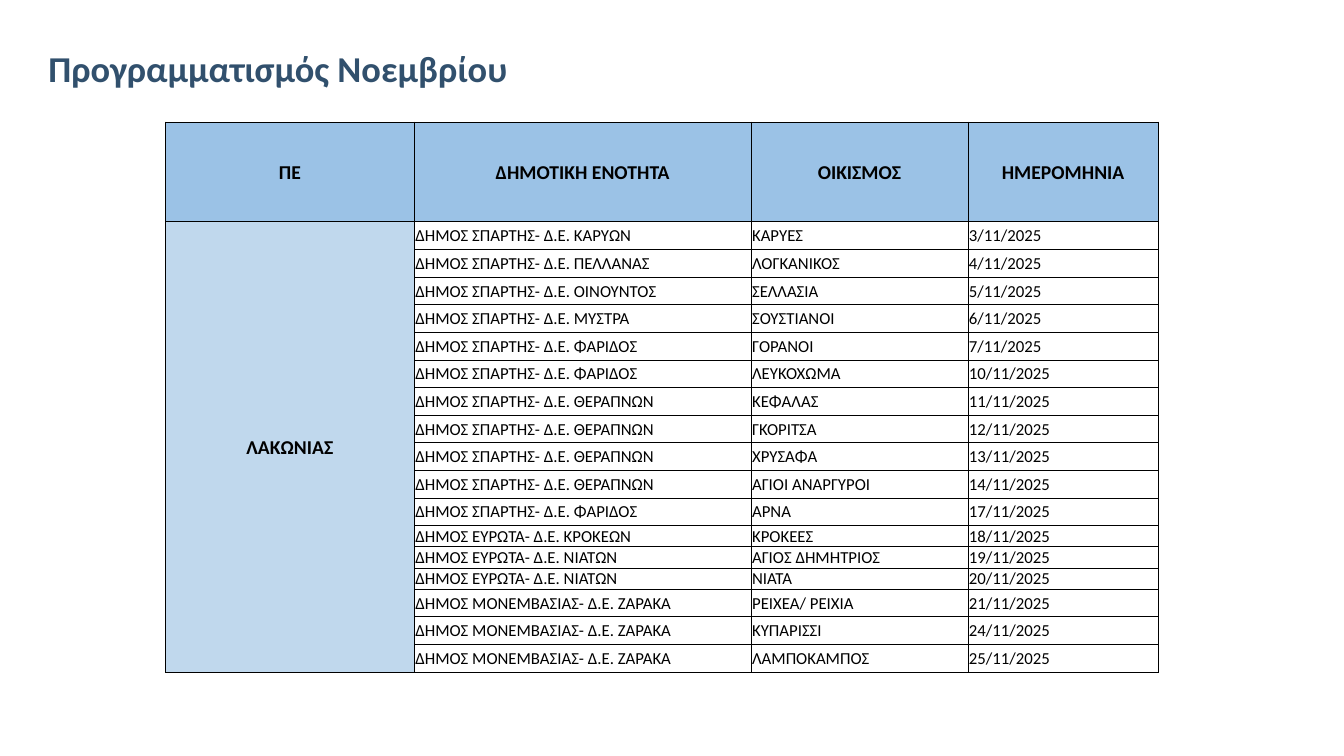
from dataclasses import dataclass

from lxml.etree import SubElement
from pptx import Presentation
from pptx.dml.color import RGBColor as RGB
from pptx.enum.text import MSO_ANCHOR as ANCHOR, PP_ALIGN as ALIGN
from pptx.oxml.ns import qn
from pptx.util import Inches, Pt


@dataclass(frozen=True)
class Theme:
    font: str = "Calibri"
    title_color: str = "31506D"
    ink: str = "000000"
    header_fill: str = "9BC2E6"
    region_fill: str = "C0D8ED"
    body_fill: str = "FFFFFF"
    title_size: int = 26
    header_size: int = 14
    body_size: int = 12
    border: float = 0.5


THEME = Theme()

HEADERS = ["ΠΕ", "ΔΗΜΟΤΙΚΗ ΕΝΟΤΗΤΑ", "ΟΙΚΙΣΜΟΣ", "ΗΜΕΡΟΜΗΝΙΑ"]
REGION = "ΛΑΚΩΝΙΑΣ"
SPARTI, EVROTAS, MONEMVASIA = "ΣΠΑΡΤΗΣ", "ΕΥΡΩΤΑ", "ΜΟΝΕΜΒΑΣΙΑΣ"
# Municipality, municipal unit, settlement, day of the month
VISITS = [
    (SPARTI, "ΚΑΡΥΩΝ", "ΚΑΡΥΕΣ", 3),
    (SPARTI, "ΠΕΛΛΑΝΑΣ", "ΛΟΓΚΑΝΙΚΟΣ", 4),
    (SPARTI, "ΟΙΝΟΥΝΤΟΣ", "ΣΕΛΛΑΣΙΑ", 5),
    (SPARTI, "ΜΥΣΤΡΑ", "ΣΟΥΣΤΙΑΝΟΙ", 6),
    (SPARTI, "ΦΑΡΙΔΟΣ", "ΓΟΡΑΝΟΙ", 7),
    (SPARTI, "ΦΑΡΙΔΟΣ", "ΛΕΥΚΟΧΩΜΑ", 10),
    (SPARTI, "ΘΕΡΑΠΝΩΝ", "ΚΕΦΑΛΑΣ", 11),
    (SPARTI, "ΘΕΡΑΠΝΩΝ", "ΓΚΟΡΙΤΣΑ", 12),
    (SPARTI, "ΘΕΡΑΠΝΩΝ", "ΧΡΥΣΑΦΑ", 13),
    (SPARTI, "ΘΕΡΑΠΝΩΝ", "ΑΓΙΟΙ ΑΝΑΡΓΥΡΟΙ", 14),
    (SPARTI, "ΦΑΡΙΔΟΣ", "ΑΡΝΑ", 17),
    (EVROTAS, "ΚΡΟΚΕΩΝ", "ΚΡΟΚΕΕΣ", 18),
    (EVROTAS, "ΝΙΑΤΩΝ", "ΑΓΙΟΣ ΔΗΜΗΤΡΙΟΣ", 19),
    (EVROTAS, "ΝΙΑΤΩΝ", "ΝΙΑΤΑ", 20),
    (MONEMVASIA, "ΖΑΡΑΚΑ", "ΡΕΙΧΕΑ/ ΡΕΙΧΙΑ", 21),
    (MONEMVASIA, "ΖΑΡΑΚΑ", "ΚΥΠΑΡΙΣΣΙ", 24),
    (MONEMVASIA, "ΖΑΡΑΚΑ", "ΛΑΜΠΟΚΑΜΠΟΣ", 25),
]
COLUMN_WIDTHS = [2.47, 3.34, 2.15, 1.89]
HEADER_HEIGHT = 0.99
EVROTAS_HEIGHT = 0.21


def write(frame, text, *, size, color=THEME.ink, bold=False, align=ALIGN.LEFT, spacing=1.0):
    paragraph = frame.paragraphs[0]
    paragraph.alignment = align
    paragraph.line_spacing = spacing
    run = paragraph.add_run()
    run.text = text
    run.font.name = THEME.font
    run.font.size = Pt(size)
    run.font.bold = bold
    run.font.color.rgb = RGB.from_string(color)


def set_margins(target, left, top, right, bottom):
    target.margin_left, target.margin_top = Inches(left), Inches(top)
    target.margin_right, target.margin_bottom = Inches(right), Inches(bottom)


def style_cell(cell, fill):
    """Set margins, anchor, borders on all four sides, then the fill."""
    set_margins(cell, 0.01, 0.01, 0.01, 0)
    cell.vertical_anchor = ANCHOR.MIDDLE
    properties = cell._tc.get_or_add_tcPr()
    for side in ("lnL", "lnR", "lnT", "lnB"):
        line = SubElement(properties, qn(f"a:{side}"), w=str(Pt(THEME.border)))
        SubElement(SubElement(line, qn("a:solidFill")), qn("a:srgbClr"), val=THEME.ink)
    cell.fill.solid()
    cell.fill.fore_color.rgb = RGB.from_string(fill)


def add_title(slide, left, top, width, height):
    frame = slide.shapes.add_textbox(*map(Inches, (left, top, width, height))).text_frame
    frame.word_wrap = True
    frame.vertical_anchor = ANCHOR.BOTTOM
    set_margins(frame, 0.12, 0.05, 0.1, 0.05)
    write(frame, "Προγραμματισμός Νοεμβρίου", size=THEME.title_size,
          color=THEME.title_color, bold=True, spacing=0.9)


def size_table(table, height):
    """Share the height left by the header and the Evrotas rows among the others."""
    for column, width in zip(table.columns, COLUMN_WIDTHS):
        column.width = Inches(width)
    short_rows = sum(visit[0] == EVROTAS for visit in VISITS)
    regular = (height - HEADER_HEIGHT - short_rows * EVROTAS_HEIGHT) / (len(VISITS) - short_rows)
    heights = [EVROTAS_HEIGHT if visit[0] == EVROTAS else regular for visit in VISITS]
    for row, row_height in zip(table.rows, [HEADER_HEIGHT, *heights]):
        row.height = Inches(row_height)


def add_schedule(slide, left, top, width, height):
    box = map(Inches, (left, top, width, height))
    table = slide.shapes.add_table(len(VISITS) + 1, len(HEADERS), *box).table
    table.horz_banding = False
    size_table(table, height)

    heading = {"size": THEME.header_size, "bold": True, "align": ALIGN.CENTER}
    for column, header in enumerate(HEADERS):
        cell = table.cell(0, column)
        style_cell(cell, THEME.header_fill)
        write(cell.text_frame, header, **heading)

    for row, (municipality, unit, settlement, day) in enumerate(VISITS, start=1):
        style_cell(table.cell(row, 0), THEME.region_fill)
        values = (f"ΔΗΜΟΣ {municipality}- Δ.Ε. {unit}", settlement, f"{day}/11/2025")
        for column, value in enumerate(values, start=1):
            cell = table.cell(row, column)
            style_cell(cell, THEME.body_fill)
            write(cell.text_frame, value, size=THEME.body_size)

    region = table.cell(1, 0)
    region.merge(table.cell(len(VISITS), 0))
    write(region.text_frame, REGION, **heading)


def main():
    deck = Presentation()
    deck.slide_width, deck.slide_height = Inches(13.33), Inches(7.5)
    slide = deck.slides.add_slide(deck.slide_layouts[6])
    add_title(slide, 0.36, 0.25, 12.4, 0.7)
    add_schedule(slide, 1.64, 1.21, 9.85, 5.46)
    deck.save("out.pptx")


if __name__ == "__main__":
    main()
